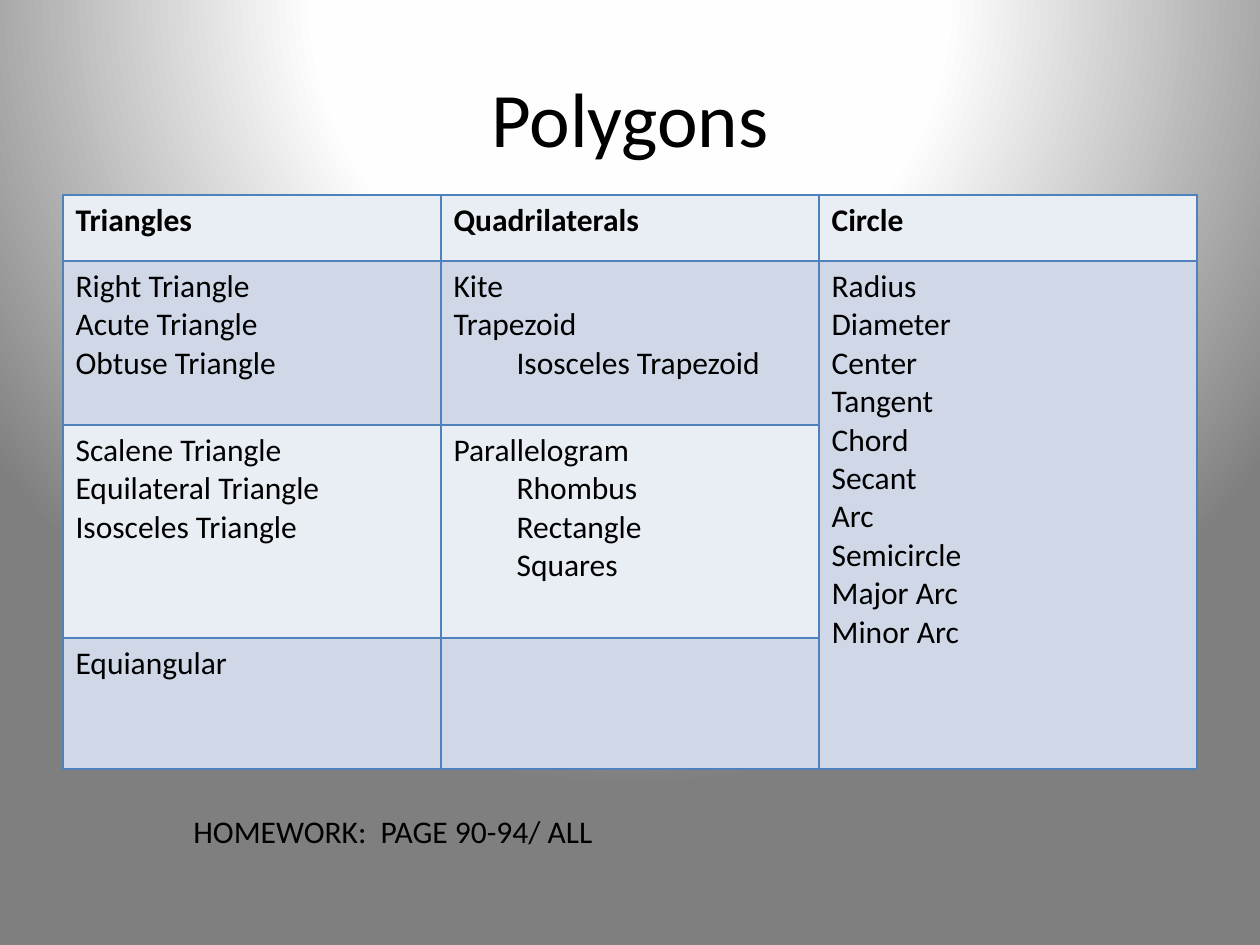
from dataclasses import dataclass

from lxml.etree import SubElement
from pptx import Presentation
from pptx.dml.color import RGBColor as Rgb
from pptx.enum.text import MSO_ANCHOR as Anchor, PP_ALIGN as Align
from pptx.oxml import parse_xml
from pptx.oxml.ns import nsdecls, qn
from pptx.util import Pt


@dataclass(frozen=True)
class Theme:
    font: str = "Calibri"
    ink: str = "000000"
    border: str = "4F81BD"
    bands: tuple = ("E9EDF4", "D0D8E8")
    glow: tuple = ((0, "FFFFFF"), (40, "FEFEFE"), (100, "7F7F7F"))
    title_size: int = 44
    body_size: int = 18
    border_width: int = 1


def px(length):
    return round(length * 914400 / 126)


class Sheet:
    """Draws themed elements on one slide."""

    def __init__(self, slide, theme):
        self.slide = slide
        self.theme = theme

    def background(self):
        stops = "".join(
            f'<a:gs pos="{place * 1000}"><a:srgbClr val="{color}"/></a:gs>'
            for place, color in self.theme.glow
        )
        glow = parse_xml(
            f'<p:bg {nsdecls("p", "a")}><p:bgPr><a:gradFill rotWithShape="1">'
            f'<a:gsLst>{stops}</a:gsLst><a:path path="circle">'
            '<a:fillToRect l="50000" t="-80000" r="50000" b="180000"/></a:path>'
            '</a:gradFill><a:effectLst/></p:bgPr></p:bg>'
        )
        self.slide.element.cSld.insert(0, glow)

    def add_words(self, paragraph, words, size, bold=False):
        run = paragraph.add_run()
        run.text = words
        run.font.name = self.theme.font
        run.font.size = Pt(size)
        run.font.bold = bold
        run.font.color.rgb = Rgb.from_string(self.theme.ink)

    def text(self, box, words, size, align=Align.LEFT, anchor=Anchor.TOP, wrap=True):
        frame = self.slide.shapes.add_textbox(*map(px, box)).text_frame
        frame.word_wrap = wrap
        frame.vertical_anchor = anchor
        frame.paragraphs[0].alignment = align
        self.add_words(frame.paragraphs[0], words, size)

    def outline(self, cell):
        properties = cell._tc.get_or_add_tcPr()
        for index, side in enumerate(("lnL", "lnR", "lnT", "lnB")):
            line = SubElement(properties, qn(f"a:{side}"), w=str(Pt(self.theme.border_width)))
            SubElement(SubElement(line, qn("a:solidFill")), qn("a:srgbClr"), val=self.theme.border)
            properties.insert(index, line)

    def fill_cell(self, cell, entries, band, bold):
        cell.fill.solid()
        cell.fill.fore_color.rgb = Rgb.from_string(band)
        self.outline(cell)
        frame = cell.text_frame
        for index, entry in enumerate(entries):
            paragraph = frame.add_paragraph() if index else frame.paragraphs[0]
            if entry.startswith("\t"):
                paragraph.level = 1
                paragraph._p.get_or_add_pPr().set("marL", str(px(63)))
            self.add_words(paragraph, entry.strip(), self.theme.body_size, bold)

    def table(self, corner, widths, heights, rows):
        size = sum(widths), sum(heights)
        grid = self.slide.shapes.add_table(
            len(heights), len(widths), *map(px, corner + size)
        ).table
        grid.first_row = grid.horz_banding = False
        for column, width in zip(grid.columns, widths):
            column.width = px(width)
        for index, (height, row) in enumerate(zip(heights, rows)):
            grid.rows[index].height = px(height)
            for column, entries in enumerate(row):
                band = self.theme.bands[index % 2]
                self.fill_cell(grid.cell(index, column), entries, band, index == 0)
        return grid


SHAPES = [
    [["Triangles"], ["Quadrilaterals"], ["Circle"]],
    [
        ["Right Triangle", "Acute Triangle", "Obtuse Triangle"],
        ["Kite", "Trapezoid", "\tIsosceles Trapezoid"],
        ["Radius", "Diameter", "Center", "Tangent", "Chord", "Secant",
         "Arc", "Semicircle", "Major Arc", "Minor Arc"],
    ],
    [
        ["Scalene Triangle", "Equilateral Triangle", "Isosceles Triangle"],
        ["Parallelogram", "\tRhombus", "\tRectangle", "\tSquares"],
        [],
    ],
    [["Equiangular"], [], []],
]


def main():
    deck = Presentation()
    deck.slide_width, deck.slide_height = px(1260), px(945)
    theme = Theme()
    sheet = Sheet(deck.slides.add_slide(deck.slide_layouts[6]), theme)
    sheet.background()
    sheet.text((63, 38, 1134, 157), "Polygons", theme.title_size, Align.CENTER, Anchor.MIDDLE)
    polygons = sheet.table((63, 195), [378] * 3, [66, 164, 213, 131], SHAPES)
    polygons.cell(1, 2).merge(polygons.cell(3, 2))
    sheet.text((181, 806, 430, 50), "HOMEWORK:  PAGE 90-94/ ALL", theme.body_size, wrap=False)
    deck.save("out.pptx")


if __name__ == "__main__":
    main()
